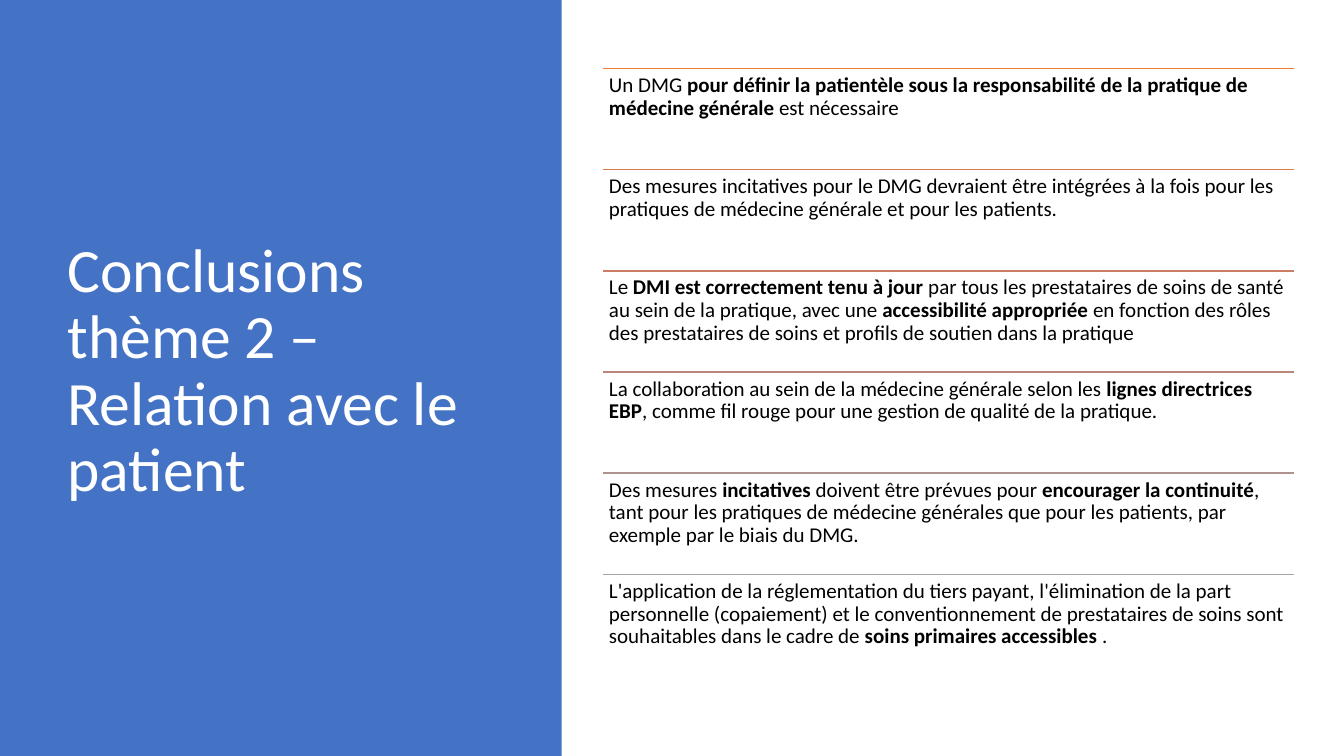
"""Build the conclusions slide on the relationship with the patient."""
import dataclasses

import lxml.etree
import pptx
import pptx.dml.color
import pptx.enum.shapes
import pptx.enum.text
import pptx.oxml.ns
import pptx.util

Inches = pptx.util.Inches


@dataclasses.dataclass(frozen=True)
class Theme:
    """Colours, font and type sizes of the slide."""
    font: str = "Calibri"
    panel: str = "4472C4"
    title: str = "FFFFFF"
    body: str = "000000"
    rules: tuple = ("ED7D31", "DC7A4B", "CC7D64", "BD867B", "B09391", "A5A5A5")
    title_size: int = 44
    body_size: int = 15
    rule_width: int = 1
    line_spacing: float = 0.9


@dataclasses.dataclass(frozen=True)
class Box:
    """A region of the slide, in inches."""
    left: float
    top: float
    width: float
    height: float

    def lengths(self):
        """Return left, top, width and height as lengths."""
        return [Inches(value) for value in dataclasses.astuple(self)]


THEME = Theme()
TITLE = "Conclusions thème 2 – Relation avec le patient"
CONCLUSIONS = [
    [("Un DMG ", False),
     ("pour définir la patientèle sous la responsabilité de la pratique de médecine générale", True),
     (" est nécessaire", False)],
    [("Des mesures incitatives pour le DMG devraient être intégrées à la fois pour les "
      "pratiques de médecine générale et pour les patients.", False)],
    [("Le ", False),
     ("DMI est correctement tenu à jour ", True),
     ("par tous les prestataires de soins de santé au sein de la pratique, avec une ", False),
     ("accessibilité appropriée ", True),
     ("en fonction des rôles des prestataires de soins et profils de soutien dans la pratique", False)],
    [("La collaboration au sein de la médecine générale selon les ", False),
     ("lignes directrices EBP", True),
     (", comme fil rouge pour une gestion de qualité de la pratique.", False)],
    [("Des mesures ", False),
     ("incitatives", True),
     (" doivent être prévues pour ", False),
     ("encourager la continuité", True),
     (", tant pour les pratiques de médecine générales que pour les patients, "
      "par exemple par le biais du DMG.", False)],
    [("L'application de la réglementation du tiers payant, l'élimination de la part personnelle "
      "(copaiement) et le conventionnement de prestataires de soins sont souhaitables "
      "dans le cadre de", False),
     (" soins primaires accessibles ", True),
     (".", False)],
]


def rgb(value):
    """Return the colour for a hexadecimal value."""
    return pptx.dml.color.RGBColor.from_string(value)


def format_paragraph(paragraph, size, colour):
    """Apply the theme's font and line spacing to a left-aligned paragraph."""
    paragraph.alignment = pptx.enum.text.PP_ALIGN.LEFT
    paragraph.line_spacing = THEME.line_spacing
    paragraph.font.name = THEME.font
    paragraph.font.size = pptx.util.Pt(size)
    paragraph.font.color.rgb = rgb(colour)


def add_title_panel(slide, box):
    """Fill the box with colour and centre the title vertically in it."""
    panel = slide.shapes.add_shape(pptx.enum.shapes.MSO_SHAPE.RECTANGLE, *box.lengths())
    panel.shadow.inherit = False
    panel.fill.solid()
    panel.fill.fore_color.rgb = rgb(THEME.panel)
    panel.line.fill.background()

    title = slide.shapes.title
    title.element.addprevious(panel.element)
    title_box = Box(box.left + 0.57, box.top + 0.68, box.width - 1.41, box.height - 1.48)
    title.left, title.top, title.width, title.height = title_box.lengths()
    frame = title.text_frame
    frame.text = TITLE
    frame.word_wrap = True
    frame.auto_size = pptx.enum.text.MSO_AUTO_SIZE.NONE
    frame.vertical_anchor = pptx.enum.text.MSO_ANCHOR.MIDDLE
    format_paragraph(frame.paragraphs[0], THEME.title_size, THEME.title)


def add_rule(slide, box, colour):
    """Draw a thin line along the top of the box."""
    left, top, width, _ = box.lengths()
    rule = slide.shapes.add_connector(
        pptx.enum.shapes.MSO_CONNECTOR.STRAIGHT, left, top, left + width, top)
    rule.line.color.rgb = rgb(colour)
    rule.line.width = pptx.util.Pt(THEME.rule_width)
    lxml.etree.SubElement(rule.element.spPr, pptx.oxml.ns.qn("a:effectLst"))


def add_conclusion(slide, box, runs):
    """Write one conclusion, with its bold passages, in the box."""
    frame = slide.shapes.add_textbox(*box.lengths()).text_frame
    frame.word_wrap = True
    frame.margin_left = frame.margin_right = Inches(0.06)
    frame.margin_top = frame.margin_bottom = Inches(0.06)
    paragraph = frame.paragraphs[0]
    format_paragraph(paragraph, THEME.body_size, THEME.body)
    for text, bold in runs:
        run = paragraph.add_run()
        run.text = text
        run.font.bold = bold


def add_conclusions(slide, box):
    """Stack the conclusions in equal rows, each under its own rule."""
    row_height = box.height / len(CONCLUSIONS)
    for index, (runs, colour) in enumerate(zip(CONCLUSIONS, THEME.rules)):
        row = Box(box.left, box.top + index * row_height, box.width, row_height)
        add_rule(slide, row, colour)
        add_conclusion(slide, row, runs)


def main():
    """Build and save the presentation."""
    presentation = pptx.Presentation()
    presentation.slide_width = Inches(13.33)
    presentation.slide_height = Inches(7.5)
    slide = presentation.slides.add_slide(presentation.slide_layouts.get_by_name("Title Only"))
    add_title_panel(slide, Box(0, 0, 5.57, 7.5))
    add_conclusions(slide, Box(5.98, 0.68, 6.85, 6.02))
    presentation.save("out.pptx")


if __name__ == "__main__":
    main()
